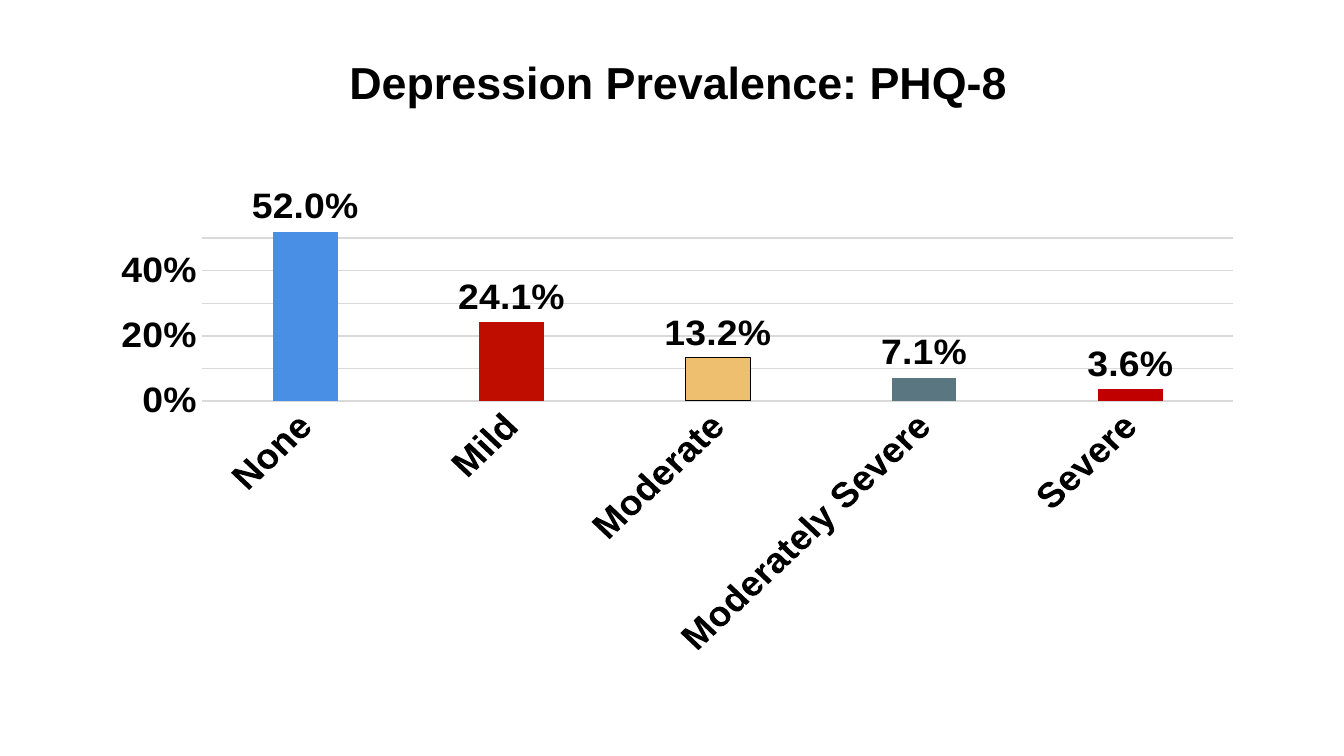
from dataclasses import dataclass

from pptx import Presentation
from pptx.chart.data import CategoryChartData
from pptx.dml.color import RGBColor
from pptx.enum.chart import XL_CHART_TYPE as ChartType
from pptx.enum.chart import XL_LABEL_POSITION as LabelPosition
from pptx.enum.chart import XL_TICK_MARK as TickMark
from pptx.enum.text import MSO_ANCHOR, PP_ALIGN
from pptx.util import Inches, Pt

BLACK = "000000"
GRID = "D9D9D9"


@dataclass(frozen=True)
class Severity:
    name: str
    share: float
    color: str
    outline: str | None = None


SEVERITIES = [
    Severity("None", 0.52, "488FE5"),
    Severity("Mild", 0.241, "BF0E00"),
    Severity("Moderate", 0.132, "EFBF70", outline=BLACK),
    Severity("Moderately Severe", 0.071, "5A7681"),
    Severity("Severe", 0.036, "C00000"),
]


def rgb(color: str) -> RGBColor:
    return RGBColor.from_string(color)


def style_font(font, size: int) -> None:
    font.name = "Arial"
    font.size = Pt(size)
    font.bold = True
    font.color.rgb = rgb(BLACK)


def style_line(line, color: str, width: float = 0.75) -> None:
    line.color.rgb = rgb(color)
    line.width = Pt(width)


def add_title(slide, text: str) -> None:
    title = slide.shapes.title
    title.left, title.top = Inches(0.41), Inches(0.16)
    title.width, title.height = Inches(9.27), Inches(0.7)
    title.text_frame.text = text
    title.text_frame.vertical_anchor = MSO_ANCHOR.BOTTOM
    heading = title.text_frame.paragraphs[0]
    heading.alignment = PP_ALIGN.CENTER
    style_font(heading.font, 24)


def style_axes(chart) -> None:
    shares, names = chart.value_axis, chart.category_axis
    for axis in (shares, names):
        axis.major_tick_mark = axis.minor_tick_mark = TickMark.NONE
        style_font(axis.tick_labels.font, 20)
    style_line(names.format.line, GRID)
    name_body = chart.element.xpath(".//c:catAx/c:txPr/a:bodyPr")[0]
    name_body.set("rot", str(-45 * 60000))
    name_body.set("vert", "horz")

    shares.minimum_scale, shares.maximum_scale = 0, 0.55
    shares.major_unit = 0.1
    shares.tick_labels.number_format = "0%"
    shares.tick_labels.number_format_is_linked = False
    shares.format.line.fill.background()
    style_line(shares.major_gridlines.format.line, GRID)


def add_severity_chart(slide, severities: list[Severity]) -> None:
    data = CategoryChartData(number_format="0.0%")
    data.categories = [severity.name for severity in severities]
    data.add_series("Series 1", [severity.share for severity in severities])
    chart = slide.shapes.add_chart(
        ChartType.COLUMN_CLUSTERED,
        Inches(0.73), Inches(1.39), Inches(8.62), Inches(3.57), data,
    ).chart
    chart.has_legend = chart.has_title = False
    style_font(chart.font, 24)
    style_axes(chart)

    plot = chart.plots[0]
    plot.gap_width, plot.overlap = 219, -27
    plot.vary_by_categories = False
    columns = plot.series[0]
    columns.format.fill.solid()
    columns.format.fill.fore_color.rgb = rgb("FF1300")
    for index, severity in enumerate(severities):
        column = columns.points[index].format
        column.fill.solid()
        column.fill.fore_color.rgb = rgb(severity.color)
        if severity.outline:
            style_line(column.line, severity.outline, 0.5)

    labels = columns.data_labels
    labels.show_value = True
    labels.position = LabelPosition.OUTSIDE_END
    labels.number_format = "0.0%"
    labels.number_format_is_linked = False
    style_font(labels.font, 20)


def main() -> None:
    deck = Presentation()
    deck.slide_width = Inches(10)
    deck.slide_height = deck.slide_width * 9 // 16
    slide = deck.slides.add_slide(deck.slide_layouts[5])
    add_title(slide, "Depression Prevalence: PHQ-8")
    add_severity_chart(slide, SEVERITIES)
    deck.save("out.pptx")


if __name__ == "__main__":
    main()
